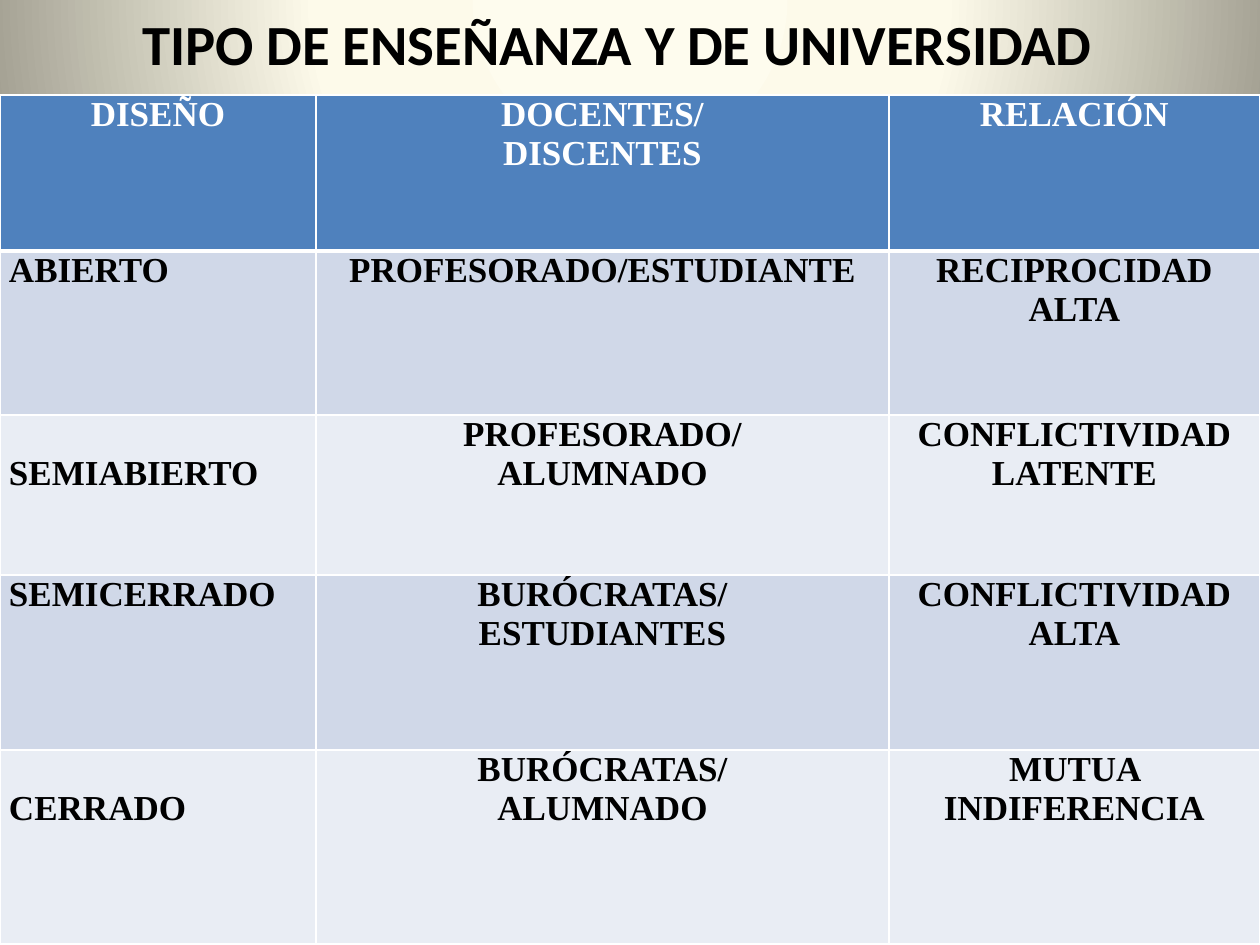
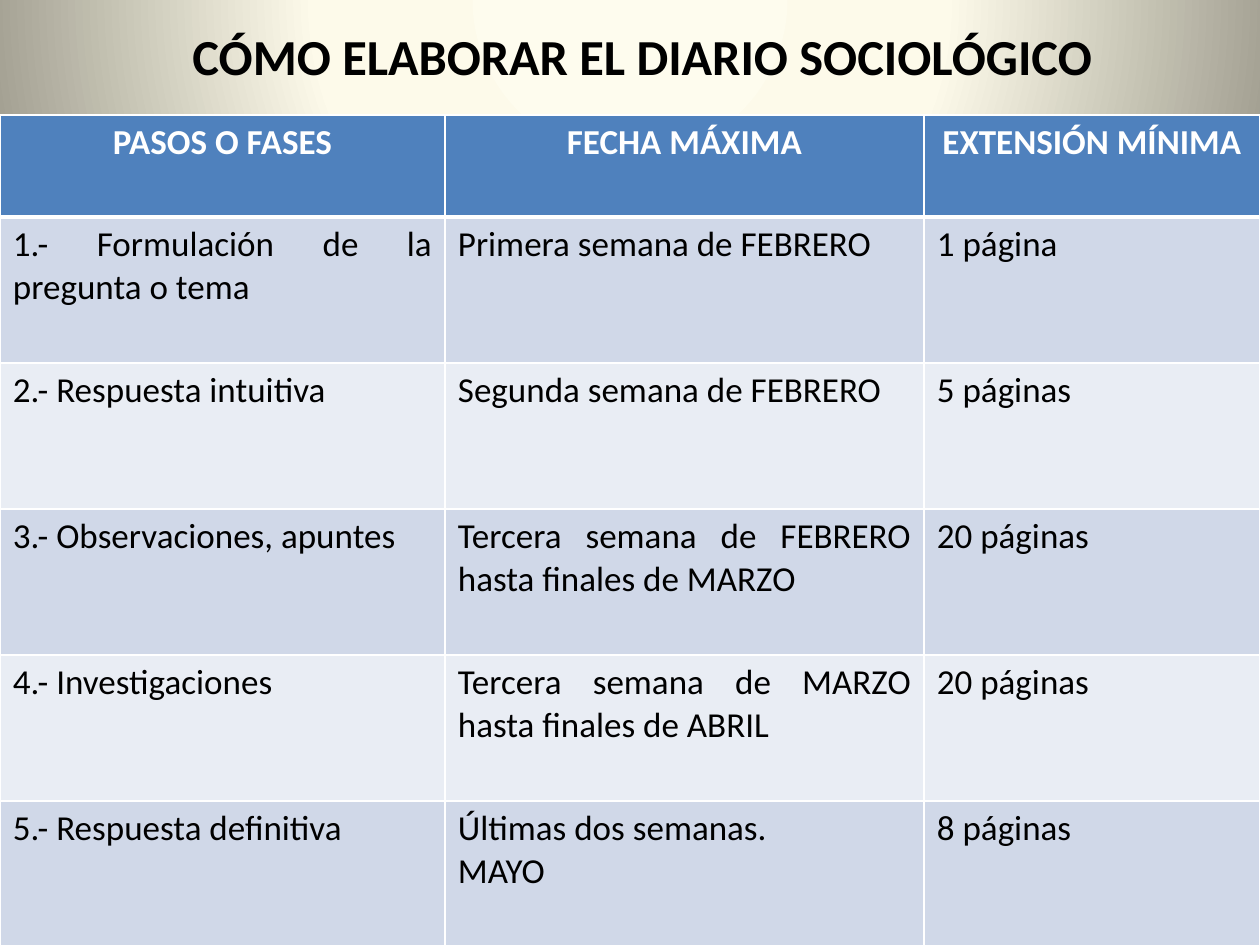
from pptx import Presentation
from pptx import util as u
from pptx.dml.color import RGBColor
from pptx.enum import text
from pptx.oxml import parse_xml
from pptx.oxml.ns import nsdecls

COLORS = {
    "header": "4F81BD", "odd_row": "D0D8E8", "even_row": "E9EDF4",
    "border": "FFFFFF", "header_text": "FFFFFF", "ink": "000000",
    "glow": "FEFCEE", "cream": "FDFAEA", "edge": "7B796B",
}
LEFT, CENTER, JUSTIFY = text.PP_ALIGN.LEFT, text.PP_ALIGN.CENTER, text.PP_ALIGN.JUSTIFY


def px(n):
    return u.Emu(round(n * 914400 / 126))


def style(paragraph, font_name, size, color, bold, align):
    paragraph.alignment = align
    paragraph.font.name = font_name
    paragraph.font.size = u.Pt(size)
    paragraph.font.bold = bold
    paragraph.font.color.rgb = RGBColor.from_string(COLORS[color])


teaching = {
    "title": "TIPO DE ENSEÑANZA Y DE UNIVERSIDAD", "title_size": 32.4,
    "title_box": (0, 0, 1235, 86), "top": 95,
    "columns": [316, 573, 371], "heights": [156, 164, 160, 175, 194],
    "font": "Times New Roman", "bold_body": True, "aligns": [LEFT, CENTER, CENTER],
    "margins": (9, 0), "lowered": {"SEMIABIERTO": 39, "CERRADO": 39},
    "rows": [
        ["DISEÑO", "DOCENTES/\nDISCENTES", "RELACIÓN"],
        ["ABIERTO", "PROFESORADO/ESTUDIANTE", "RECIPROCIDAD ALTA"],
        ["SEMIABIERTO", "PROFESORADO/\nALUMNADO", "CONFLICTIVIDAD LATENTE"],
        ["SEMICERRADO", "BURÓCRATAS/\nESTUDIANTES", "CONFLICTIVIDAD ALTA"],
        ["CERRADO", "BURÓCRATAS/\nALUMNADO", "MUTUA INDIFERENCIA"],
    ],
}
diary = {
    "title": "CÓMO ELABORAR EL DIARIO SOCIOLÓGICO", "title_size": 28.8,
    "title_box": (25, 16, 1235, 79), "top": 115,
    "columns": [445, 479, 336], "heights": [102] + [146] * 5,
    "font": "Calibri", "bold_body": False, "aligns": [JUSTIFY] * 3,
    "margins": (13, 6), "lowered": {},
    "rows": [
        ["PASOS O FASES", "FECHA MÁXIMA", "EXTENSIÓN MÍNIMA"],
        ["1.- Formulación de la pregunta o tema", "Primera semana de FEBRERO", "1 página"],
        ["2.- Respuesta intuitiva", "Segunda semana de FEBRERO", "5 páginas"],
        ["3.- Observaciones, apuntes", "Tercera semana de FEBRERO hasta finales de MARZO", "20 páginas"],
        ["4.- Investigaciones", "Tercera semana de MARZO hasta finales de ABRIL", "20 páginas"],
        ["5.- Respuesta definitiva", "Últimas dos semanas.\nMAYO", "8 páginas"],
    ],
}

prs = Presentation()
prs.slide_width, prs.slide_height = px(1260), px(945)

prs.slide_master.background.fill.solid()
plain_fill = prs.slide_master.element.xpath(".//p:bgPr/a:solidFill")[0]
stops = "".join(
    f'<a:gs pos="{pos * 1000}"><a:srgbClr val="{COLORS[name]}"/></a:gs>'
    for pos, name in [(0, "glow"), (40, "cream"), (100, "edge")]
)
plain_fill.getparent().replace(plain_fill, parse_xml(
    f'<a:gradFill {nsdecls("a")} rotWithShape="1"><a:gsLst>{stops}</a:gsLst>'
    '<a:path path="circle"><a:fillToRect l="50000" t="-80000" r="50000" b="180000"/>'
    '</a:path></a:gradFill>'
))

for topic in (teaching, diary):
    slide = prs.slides.add_slide(prs.slide_layouts[5])
    title = slide.shapes.title
    title.left, title.top, title.width, title.height = map(px, topic["title_box"])
    title.text_frame.text = topic["title"]
    title.text_frame.auto_size = text.MSO_AUTO_SIZE.NONE
    title.text_frame.vertical_anchor = text.MSO_ANCHOR.MIDDLE
    style(title.text_frame.paragraphs[0], "Calibri", topic["title_size"], "ink", True, CENTER)

    rows = topic["rows"]
    grid = slide.shapes.add_table(
        len(rows), 3, 0, px(topic["top"]), px(1260), px(sum(topic["heights"]))
    ).table
    for column, width in zip(grid.columns, topic["columns"]):
        column.width = px(width)
    for r, (row, height) in enumerate(zip(rows, topic["heights"])):
        grid.rows[r].height = px(height)
        is_header = r == 0
        fill = "header" if is_header else "odd_row" if r % 2 else "even_row"
        for c, wording in enumerate(row):
            cell = grid.cell(r, c)
            cell.text = wording
            side, edge = topic["margins"]
            cell.margin_left = cell.margin_right = px(side)
            cell.margin_top = px(topic["lowered"].get(wording, edge))
            cell.margin_bottom = px(edge)
            cell.fill.solid()
            cell.fill.fore_color.rgb = RGBColor.from_string(COLORS[fill])
            for paragraph in cell.text_frame.paragraphs:
                style(paragraph, topic["font"], 20,
                      "header_text" if is_header else "ink",
                      is_header or topic["bold_body"],
                      CENTER if is_header else topic["aligns"][c])
            weights = {"L": 1, "R": 1, "T": 3 if r == 1 else 1, "B": 3 if is_header else 1}
            for position, (border, weight) in enumerate(weights.items()):
                cell._tc.get_or_add_tcPr().insert(position, parse_xml(
                    f'<a:ln{border} {nsdecls("a")} w="{u.Pt(weight)}"><a:solidFill>'
                    f'<a:srgbClr val="{COLORS["border"]}"/></a:solidFill></a:ln{border}>'
                ))

prs.save("out.pptx")
